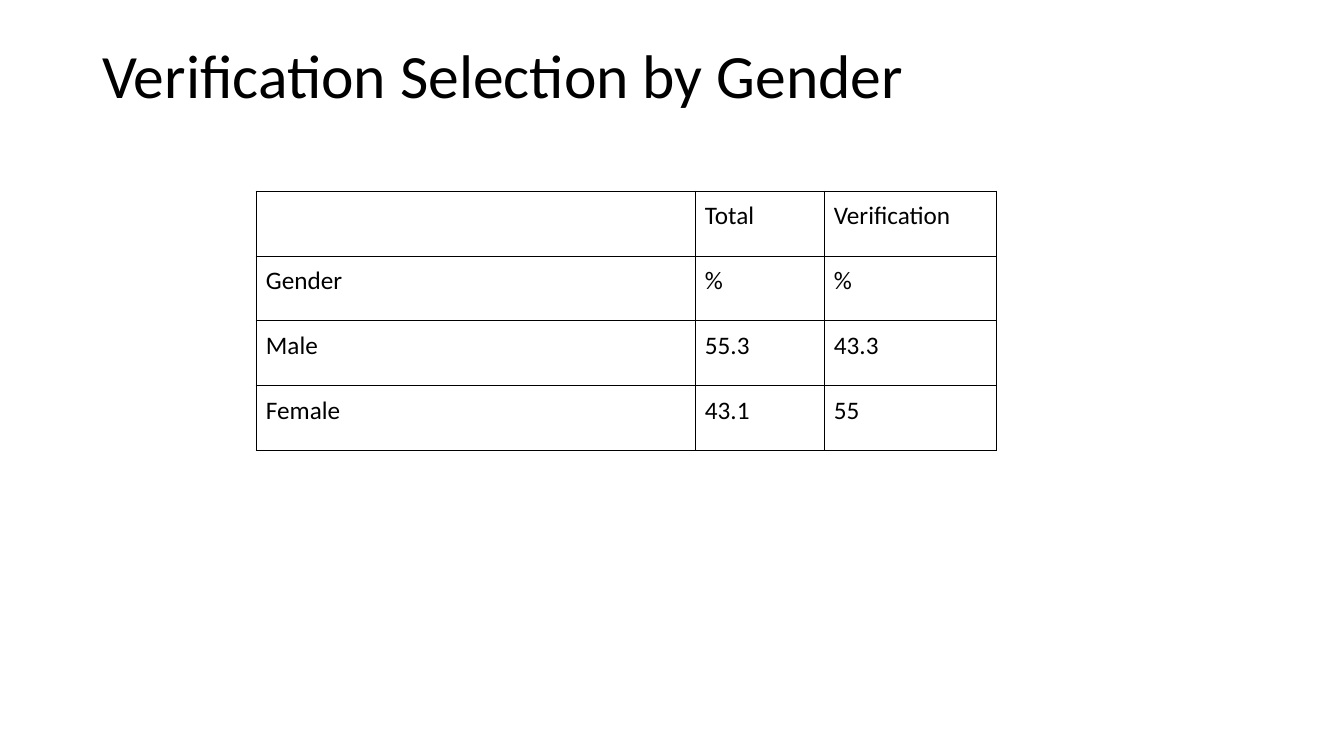
from lxml.etree import SubElement
from pptx import Presentation
from pptx.dml.color import RGBColor
from pptx.enum.text import MSO_ANCHOR, PP_ALIGN
from pptx.oxml.ns import qn
from pptx.util import Pt

PX = 914400 / 100.8
BLACK = "000000"
COLUMN_WIDTHS = [439, 129, 172]
ROW_HEIGHT = 65
CELL_MARGIN = 10
ROWS = [
    ["", "Total", "Verification"],
    ["Gender", "%", "%"],
    ["Male", "55.3", "43.3"],
    ["Female", "43.1", "55"],
]


def px(length):
    """Turn pixels into EMU."""
    return round(length * PX)


def style_font(font, size, color):
    font.name = "Calibri"
    font.size = Pt(size)
    font.color.rgb = RGBColor.from_string(color)


deck = Presentation()
deck.slide_width, deck.slide_height = px(1344), px(756)
page = deck.slides.add_slide(deck.slide_layouts[5])

title = page.shapes.title
title.left, title.top, title.width, title.height = px(92), px(40), px(1160), px(146)
title.text_frame.text = "Verification Selection by Gender"
title.text_frame.vertical_anchor = MSO_ANCHOR.TOP
para = title.text_frame.paragraphs[0]
para.alignment = PP_ALIGN.LEFT
para.line_spacing = 0.9
style_font(para.runs[0].font, 44, BLACK)

table = page.shapes.add_table(
    len(ROWS), len(COLUMN_WIDTHS), px(256), px(191),
    px(sum(COLUMN_WIDTHS)), px(ROW_HEIGHT * len(ROWS)),
).table
table.first_row = False
table.horz_banding = False
for column, width in zip(table.columns, COLUMN_WIDTHS):
    column.width = px(width)

for row, texts in zip(table.rows, ROWS):
    row.height = px(ROW_HEIGHT)
    for cell, text in zip(row.cells, texts):
        cell.margin_left = cell.margin_right = px(CELL_MARGIN)
        cell.margin_top = cell.margin_bottom = px(CELL_MARGIN)
        cell.vertical_anchor = MSO_ANCHOR.TOP
        cell.text_frame.text = text
        para = cell.text_frame.paragraphs[0]
        style_font(para.font, 18, BLACK)
        for span in para.runs:
            style_font(span.font, 18, BLACK)

        properties = cell._tc.get_or_add_tcPr()
        for side in ("lnL", "lnR", "lnT", "lnB"):
            border = SubElement(properties, qn(f"a:{side}"), w=str(Pt(0.75)))
            paint = SubElement(border, qn("a:solidFill"))
            SubElement(paint, qn("a:srgbClr"), val=BLACK)
        cell.fill.background()

deck.save("out.pptx")
